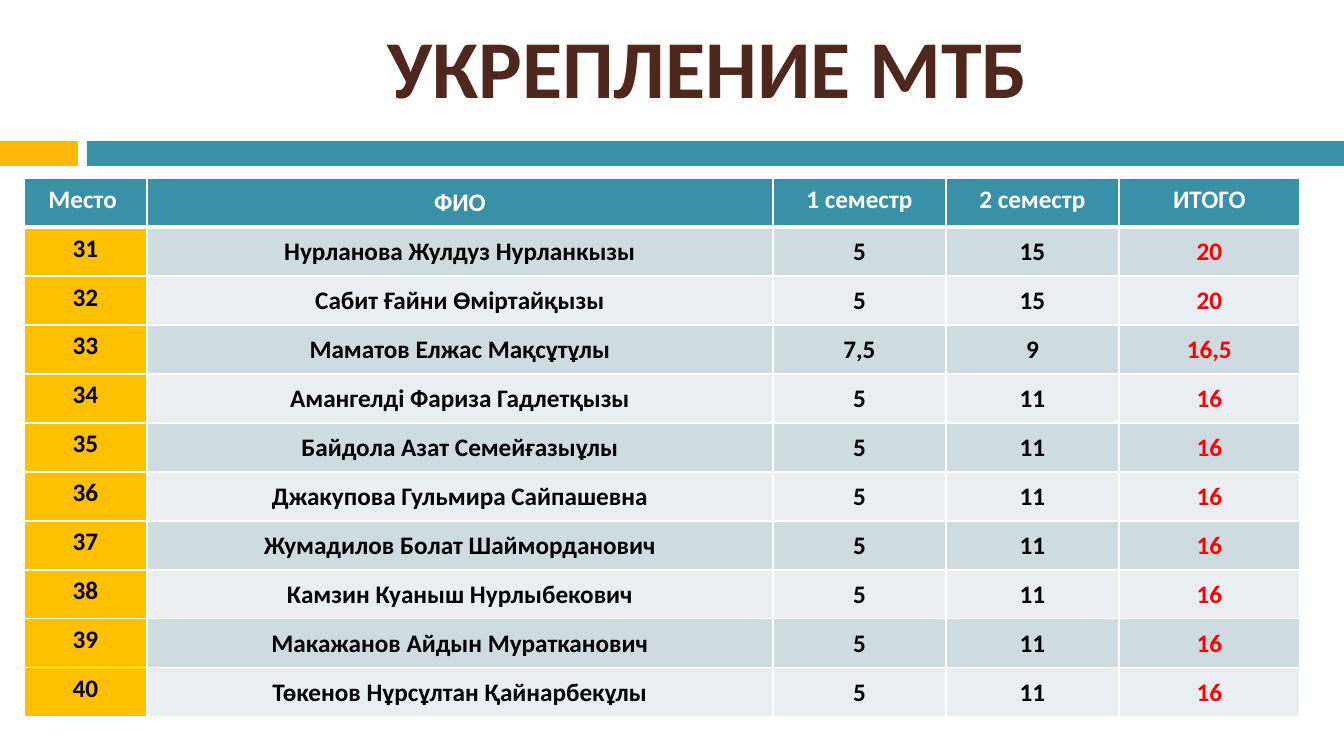
from dataclasses import dataclass

from lxml.etree import SubElement
from pptx import Presentation
from pptx.dml.color import RGBColor
from pptx.enum.shapes import MSO_SHAPE
from pptx.enum.text import MSO_ANCHOR, MSO_AUTO_SIZE, PP_ALIGN
from pptx.oxml.ns import qn
from pptx.slide import Slide
from pptx.table import _Cell as Cell
from pptx.text.text import TextFrame
from pptx.util import Pt

EMU_PER_PX = 914400 / 121
FONT = "Calibri"
WHITE, BLACK, RED = "FFFFFF", "000000", "FF0000"
TEAL, AMBER, GOLD, BROWN = "3891A7", "FEB80A", "FFC000", "4F271C"
BANDS = ("CEDCE1", "E8EEF1")

TABLE_LEFT, TABLE_TOP, ROW_HEIGHT = 24, 178, 49
COLUMN_WIDTHS = (123, 626, 173, 173, 181)
HEADERS = ("Место ", "ФИО", "1 семестр", "2 семестр", "ИТОГО")
FIRST_PLACE = 31


@dataclass(frozen=True)
class Bar:
    left: int
    width: int
    color: str


@dataclass(frozen=True)
class Result:
    name: str
    first: str = "5"
    second: str = "11"
    total: str = "16"


@dataclass(frozen=True)
class CellStyle:
    fill: str
    color: str
    middle: bool
    tight: bool
    top: int = 1
    bottom: int = 1


BARS = (Bar(0, 78, AMBER), Bar(87, 1257, TEAL))
RESULTS = (
    Result("Нурланова Жулдуз Нурланкызы", "5", "15", "20"),
    Result("Сабит Ғайни Өміртайқызы", "5", "15", "20"),
    Result("Маматов Елжас Мақсұтұлы", "7,5", "9", "16,5"),
    Result("Амангелді Фариза Гадлетқызы"),
    Result("Байдола Азат Семейғазыұлы"),
    Result("Джакупова Гульмира Сайпашевна"),
    Result("Жумадилов Болат Шайморданович"),
    Result("Камзин Куаныш Нурлыбекович"),
    Result("Макажанов Айдын Муратканович"),
    Result("Төкенов Нұрсұлтан Қайнарбекұлы"),
)


def px(n: int) -> int:
    return round(n * EMU_PER_PX)


def rgb(color: str) -> RGBColor:
    return RGBColor.from_string(color)


def set_text(tf: TextFrame, text: str, size: float, color: str) -> None:
    tf.text = text
    p = tf.paragraphs[0]
    p.alignment = PP_ALIGN.CENTER
    p.font.name = FONT
    p.font.size = Pt(size)
    p.font.bold = True
    p.font.color.rgb = rgb(color)


def add_title(s: Slide, text: str) -> None:
    sp = s.shapes.title
    sp.left, sp.top, sp.width, sp.height = px(108), px(5), px(1199), px(121)
    tf = sp.text_frame
    tf.auto_size = MSO_AUTO_SIZE.NONE
    tf.vertical_anchor = MSO_ANCHOR.MIDDLE
    tf.margin_left = tf.margin_right = px(11)
    tf.margin_top = tf.margin_bottom = px(5)
    set_text(tf, text, 48.9, BROWN)


def add_bar(s: Slide, bar: Bar) -> None:
    sp = s.shapes.add_shape(
        MSO_SHAPE.RECTANGLE, px(bar.left), px(141), px(bar.width), px(25)
    )
    sp.shadow.inherit = False
    sp.fill.solid()
    sp.fill.fore_color.rgb = rgb(bar.color)
    sp.line.fill.background()


def add_borders(cell: Cell, top: int, bottom: int) -> None:
    tc_pr = cell._tc.get_or_add_tcPr()
    for side, width in (("L", 1), ("R", 1), ("T", top), ("B", bottom)):
        ln = SubElement(tc_pr, qn(f"a:ln{side}"), w=str(Pt(width)))
        fill = SubElement(ln, qn("a:solidFill"))
        SubElement(fill, qn("a:srgbClr"), val=WHITE)


def style_for(row: int, col: int) -> CellStyle:
    if row == 0:
        return CellStyle(TEAL, WHITE, middle=col == 1, tight=False, bottom=3)
    top = 3 if row == 1 else 1
    if col == 0:
        return CellStyle(GOLD, BLACK, middle=False, tight=False, top=top)
    color = RED if col == len(HEADERS) - 1 else BLACK
    return CellStyle(BANDS[(row - 1) % 2], color, middle=True, tight=True, top=top)


def fill_cell(cell: Cell, text: str, style: CellStyle) -> None:
    set_text(cell.text_frame, text, 15, style.color)
    if style.middle:
        cell.vertical_anchor = MSO_ANCHOR.MIDDLE
    if style.tight:
        cell.margin_left = cell.margin_right = cell.margin_top = px(1)
        cell.margin_bottom = 0
    add_borders(cell, style.top, style.bottom)
    cell.fill.solid()
    cell.fill.fore_color.rgb = rgb(style.fill)


def add_results(s: Slide) -> None:
    rows = [HEADERS] + [
        (str(place), r.name, r.first, r.second, r.total)
        for place, r in enumerate(RESULTS, FIRST_PLACE)
    ]
    table = s.shapes.add_table(
        len(rows), len(HEADERS), px(TABLE_LEFT), px(TABLE_TOP),
        px(sum(COLUMN_WIDTHS)), px(ROW_HEIGHT * len(rows)),
    ).table
    for column, width in zip(table.columns, COLUMN_WIDTHS):
        column.width = px(width)
    for i, texts in enumerate(rows):
        table.rows[i].height = px(ROW_HEIGHT)
        for j, text in enumerate(texts):
            fill_cell(table.cell(i, j), text, style_for(i, j))


def main() -> None:
    prs = Presentation()
    prs.slide_width, prs.slide_height = px(1344), px(756)
    s = prs.slides.add_slide(prs.slide_layouts[5])
    for bar in BARS:
        add_bar(s, bar)
    add_title(s, "УКРЕПЛЕНИЕ МТБ")
    add_results(s)
    prs.save("out.pptx")


if __name__ == "__main__":
    main()
